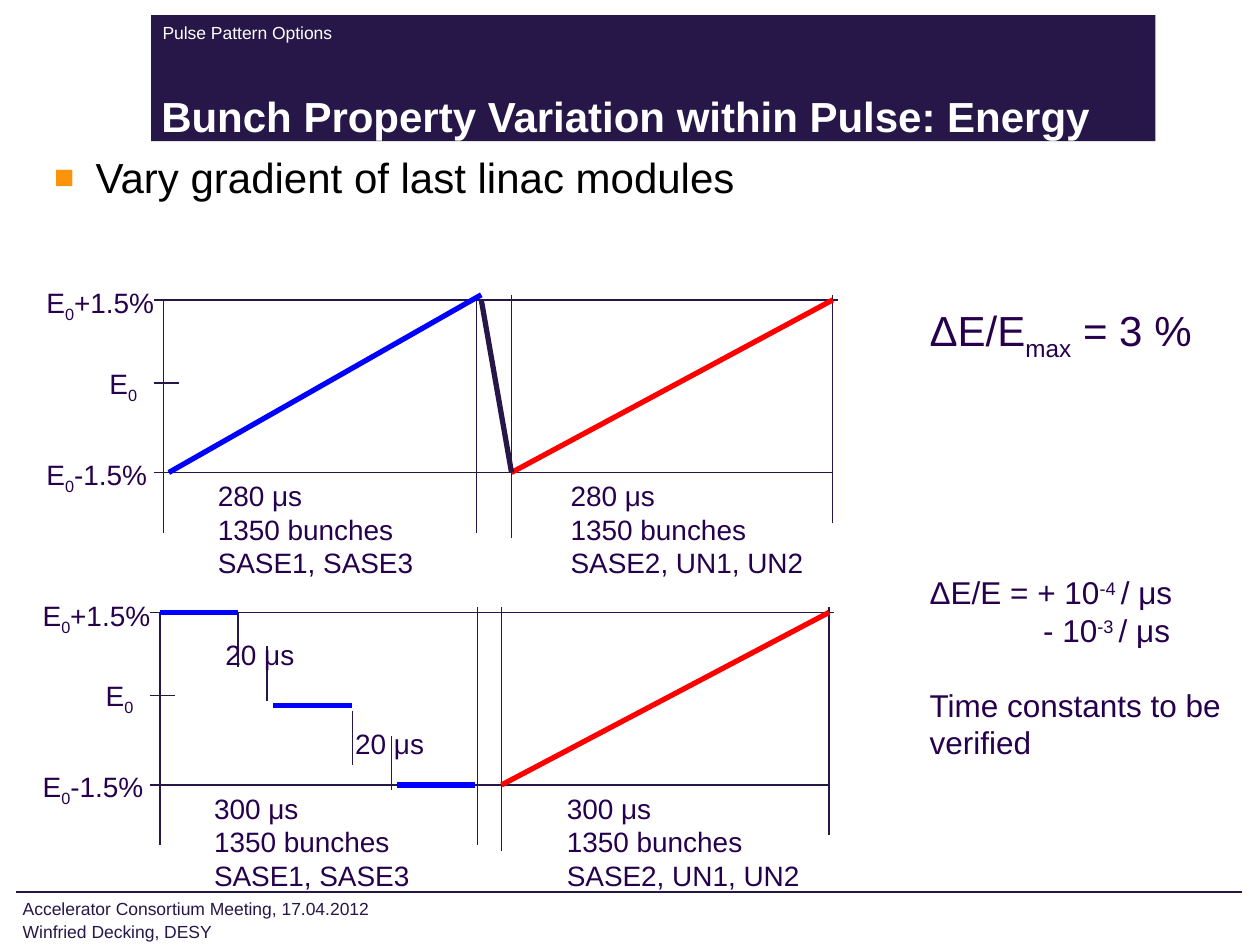
import pptx
import pptx.util
import pptx.dml.color
import pptx.enum.shapes
import pptx.enum.text
import pptx.oxml
import pptx.oxml.ns

Pt = pptx.util.Pt
RGB = pptx.dml.color.RGBColor
Anchor = pptx.enum.text.MSO_ANCHOR
Fit = pptx.enum.text.MSO_AUTO_SIZE

NAVY = RGB(0x26, 0x17, 0x48)
PURPLE = RGB(0x26, 0x00, 0x4D)
BLUE = RGB(0x00, 0x00, 0xFF)
RED = RGB(0xFF, 0x00, 0x00)
WHITE = RGB(0xFF, 0xFF, 0xFF)
BLACK = RGB(0x00, 0x00, 0x00)
ORANGE = "FD930A"

SCALE = 9144  # EMU per px, 100 px to the inch
MID, LOW = 66, 137  # depth of E0 and E0-1.5% below the top line


def px(n):
    return pptx.util.Emu(n * SCALE)


def write(frame, text, size=16, color=PURPLE, bold=False, shift=-25,
          inset=(10, 5, 10, 5), anchor=Anchor.TOP, wrap=True, fit=Fit.NONE,
          lead=None):
    """Fill a frame; every second part between bars is raised or lowered."""
    frame.word_wrap = wrap
    frame.auto_size = fit
    frame.vertical_anchor = anchor
    (frame.margin_left, frame.margin_top,
     frame.margin_right, frame.margin_bottom) = map(px, inset)
    for i, line in enumerate(text.split("\n")):
        para = frame.add_paragraph() if i else frame.paragraphs[0]
        para.space_before = Pt(0)
        if lead:
            para.line_spacing = lead
        for j, part in enumerate(line.split("|")):
            run = para.add_run()
            run.text = part
            run.font.name = "Arial"
            run.font.size = Pt(size)
            run.font.bold = bold
            run.font.color.rgb = color
            if j % 2:
                run.font._element.set("baseline", str(shift * 1000))


def label(slide, box, text, **style):
    frame = slide.shapes.add_textbox(*map(px, box)).text_frame
    write(frame, text, **style)
    return frame


def tag(slide, box, text, **style):
    """Add a label that grows with its text and does not wrap."""
    label(slide, box, text, wrap=False, fit=Fit.SHAPE_TO_FIT_TEXT, **style)


def rule(slide, x1, y1, x2, y2, color=NAVY, width=0.75):
    line = slide.shapes.add_connector(
        pptx.enum.shapes.MSO_CONNECTOR.STRAIGHT, *map(px, (x1, y1, x2, y2)))
    line.line.color.rgb = color
    line.line.width = Pt(width)
    props = line._element.spPr
    props.append(props.makeelement(pptx.oxml.ns.qn("a:effectLst"), {}))


def place(shape, box):
    shape.left, shape.top, shape.width, shape.height = map(px, box)


def header(slide, x, y, w, h):
    band = slide.shapes.add_shape(
        pptx.enum.shapes.MSO_SHAPE.RECTANGLE, *map(px, (x, y, w, h)))
    band.shadow.inherit = False
    band.fill.solid()
    band.fill.fore_color.rgb = NAVY
    band.line.fill.background()
    slide.shapes._spTree.insert(2, band._element)  # behind the title
    label(slide, (x, y + 1, 725, 21), "Pulse Pattern Options", size=10,
          color=WHITE, inset=(9, 0, 5, 0), anchor=Anchor.BOTTOM, lead=1.1)
    title = slide.shapes.title
    place(title, (x, y + 47, w, h - 47))
    write(title.text_frame, "Bunch Property Variation within Pulse: Energy",
          size=24, color=WHITE, bold=True, inset=(8, 5, 10, 0),
          anchor=Anchor.BOTTOM)
    title.text_frame.paragraphs[0].alignment = pptx.enum.text.PP_ALIGN.LEFT


def bullets(slide, *box):
    body = slide.placeholders[1]
    place(body, box)
    write(body.text_frame, "Vary gradient of last linac modules", size=24,
          color=BLACK, inset=(30, 0, 10, 5))
    props = body.text_frame.paragraphs[0]._p.get_or_add_pPr()
    props.set("marL", str(px(33)))
    props.set("indent", str(px(-33)))
    ns = pptx.oxml.ns.nsdecls("a")
    for mark in (f'<a:buClr {ns}><a:srgbClr val="{ORANGE}"/></a:buClr>',
                 f'<a:buSzPct {ns} val="80000"/>',
                 f'<a:buFont {ns} typeface="Arial"/>',
                 f'<a:buChar {ns} char="■"/>'):
        props.append(pptx.oxml.parse_xml(mark))


def panel(slide, x, y, end, start, span):
    """Draw axes, captions and the second ramp; x, y is the top left corner."""
    right = 531
    rule(slide, x, y, x, y + 185)
    rule(slide, x - 8, y, x + right + 4, y)
    rule(slide, x + 4, y + LOW, x + right, y + LOW)
    for depth in (MID, LOW):
        rule(slide, x - 8, y + depth, x + 12, y + depth)
    for at, foot in ((end, 185), (start, 189), (right, 177)):
        rule(slide, x + at, y - 4, x + at, y + foot)
    rule(slide, x + start, y + LOW, x + right, y, RED, 3)
    for left, top, wide, text in ((-103, -16, 107, "E|0|+1.5%"),
                                  (-53, 48, 43, "E|0"),
                                  (-103, 120, 102, "E|0|-1.5%")):
        tag(slide, (x + left, y + top, wide, 37), text)
    for left, wide, names in ((33, 175, "SASE1, SASE3"),
                              (313, 205, "SASE2, UN1, UN2")):
        tag(slide, (x + left, y + LOW, wide, 90),
            f"{span} μs\n1350 bunches\n{names}")


def ramp(slide, x, y):
    end, start = 248, 276
    panel(slide, x, y, end, start, 280)
    rule(slide, x + 4, y + LOW, x + end + 4, y - 4, BLUE, 3)
    rule(slide, x + end + 4, y, x + start, y + LOW, NAVY, 3)


def steps(slide, x, y):
    panel(slide, x, y, 252, 271, 300)
    for left, depth in ((0, 0), (90, 74), (188, LOW)):
        rule(slide, x + left, y + depth, x + left + 62, y + depth, BLUE, 3)
    for left, top in ((62, 0), (85, 27), (153, 78), (184, 98)):
        rule(slide, x + left, y + top, x + left, y + top + 43)
    for left, top in ((42, 15), (145, 86)):
        tag(slide, (x + left, y + top, 75, 37), "20 μs")


def notes(slide, x, y):
    tag(slide, (x, y, 231, 50), "ΔE/E|max| = 3 %", size=24)
    frame = label(slide, (x, y + 213, 251, 192),
                  "ΔE/E = + 10|-4 |/ μs\n- 10|-3 |/ μs\n"
                  "Time constants to be verified", size=18, shift=30)
    rate, last = frame.paragraphs[1:]
    rate._p.get_or_add_pPr().set("marL", str(px(90)))
    last.space_before = Pt(21)


def footer(slide, x, y):
    rule(slide, x, y, x + 973, y, width=1)
    label(slide, (x - 4, y - 10, 338, 50),
          "Accelerator Consortium Meeting, 17.04.2012\nWinfried Decking, DESY",
          size=10, color=NAVY, inset=(9, 0, 5, 0), anchor=Anchor.BOTTOM,
          lead=1.1)


def main():
    deck = pptx.Presentation()
    deck.slide_width, deck.slide_height = px(1000), px(750)
    slide = deck.slides.add_slide(deck.slide_layouts[1])
    header(slide, 120, 12, 797, 100)
    bullets(slide, 13, 120, 973, 573)
    ramp(slide, 130, 238)
    steps(slide, 127, 486)
    notes(slide, 728, 237)
    footer(slide, 13, 708)
    deck.save("out.pptx")


if __name__ == "__main__":
    main()
